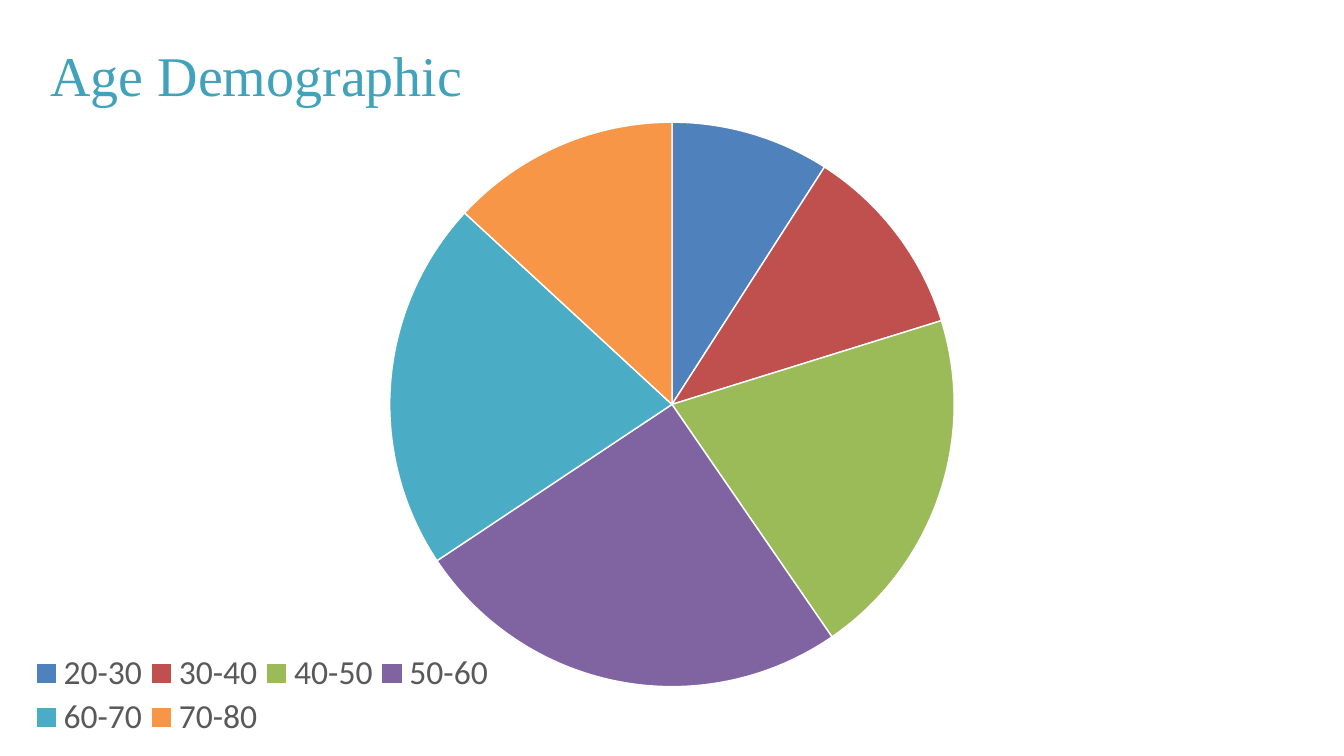
"""Build the age demographic pie chart slide."""
from typing import NamedTuple, Optional

from lxml.etree import SubElement
from pptx import Presentation
from pptx.chart.data import CategoryChartData
from pptx.dml.color import RGBColor
from pptx.enum.chart import XL_CHART_TYPE, XL_LEGEND_POSITION
from pptx.oxml.ns import qn
from pptx.util import Inches, Pt

WHITE = RGBColor(0xFF, 0xFF, 0xFF)
BLACK = RGBColor(0x00, 0x00, 0x00)
GREY = RGBColor(0x59, 0x59, 0x59)
TEAL = RGBColor(0x40, 0xA2, 0xBB)


class Slice(NamedTuple):
    label: str
    value: int
    color: RGBColor


class Area(NamedTuple):
    """Position and size as shares of the slide."""
    x: float
    y: float
    w: Optional[float] = None
    h: Optional[float] = None


SLICES = [
    Slice("20-30", 9, RGBColor(0x4F, 0x81, 0xBD)),
    Slice("30-40", 11, RGBColor(0xC0, 0x50, 0x4D)),
    Slice("40-50", 20, RGBColor(0x9B, 0xBB, 0x59)),
    Slice("50-60", 25, RGBColor(0x80, 0x64, 0xA2)),
    Slice("60-70", 21, RGBColor(0x4B, 0xAC, 0xC6)),
    Slice("70-80", 13, RGBColor(0xF7, 0x96, 0x46)),
]
TITLE_AREA = Area(0.03, 0.04)
PIE_AREA = Area(0.29, 0.16, 0.42, 0.75)
LEGEND_AREA = Area(0.02, 0.86, 0.35, 0.12)
TITLE_FONT = {"name": "Times New Roman", "size": Pt(60), "bold": False}
LEGEND_FONT = {"name": "Calibri", "size": Pt(36)}
CHART_FONT = {"name": "Calibri", "size": Pt(10)}


def set_font(font, values: dict, color: RGBColor) -> None:
    """Apply the format values and colour to a font."""
    for name, value in values.items():
        setattr(font, name, value)
    font.color.rgb = color


def place(parent, area: Area, after: str, inner: bool = False) -> None:
    """Give a chart part a manual layout following the named child."""
    for old in parent.findall(qn("c:layout")):
        parent.remove(old)
    layout = SubElement(parent, qn("c:layout"))
    manual = SubElement(layout, qn("c:manualLayout"))
    if inner:
        SubElement(manual, qn("c:layoutTarget")).set("val", "inner")
    for mode in ("xMode", "yMode"):
        SubElement(manual, qn(f"c:{mode}")).set("val", "edge")
    for name, share in area._asdict().items():
        if share is not None:
            SubElement(manual, qn(f"c:{name}")).set("val", str(share))
    previous = parent.find(qn(after)) if after else None
    if previous is None:
        parent.insert(0, layout)
    else:
        previous.addnext(layout)


def add_pie(s, prs, slices: list[Slice]) -> None:
    """Draw the pie with its title and legend across the slide."""
    data = CategoryChartData()
    data.categories = [item.label for item in slices]
    data.add_series("Series 1", [item.value for item in slices])
    chart = s.shapes.add_chart(
        XL_CHART_TYPE.PIE, 0, 0, prs.slide_width, prs.slide_height, data
    ).chart
    set_font(chart.font, CHART_FONT, BLACK)

    chart.has_title = True
    p = chart.chart_title.text_frame.paragraphs[0]
    r = p.add_run()
    r.text = "Age Demographic"
    set_font(r.font, TITLE_FONT, TEAL)

    chart.has_legend = True
    legend = chart.legend
    legend.position = XL_LEGEND_POSITION.BOTTOM
    legend.include_in_layout = False
    set_font(legend.font, LEGEND_FONT, GREY)

    plot = chart.plots[0]
    plot.vary_by_categories = True
    for i, item in enumerate(slices):
        fmt = plot.series[0].points[i].format
        fmt.fill.solid()
        fmt.fill.fore_color.rgb = item.color
        fmt.line.color.rgb = WHITE
        fmt.line.width = Pt(1.5)

    root = chart.element.chart
    place(root.find(qn("c:title")), TITLE_AREA, "c:tx")
    place(root.plotArea, PIE_AREA, "", inner=True)
    place(root.find(qn("c:legend")), LEGEND_AREA, "c:legendPos")


def main() -> None:
    """Create and save the presentation."""
    prs = Presentation()
    prs.slide_width, prs.slide_height = Inches(20), Inches(11.25)
    s = prs.slides.add_slide(prs.slide_layouts[6])
    add_pie(s, prs, SLICES)
    prs.save("out.pptx")


if __name__ == "__main__":
    main()
